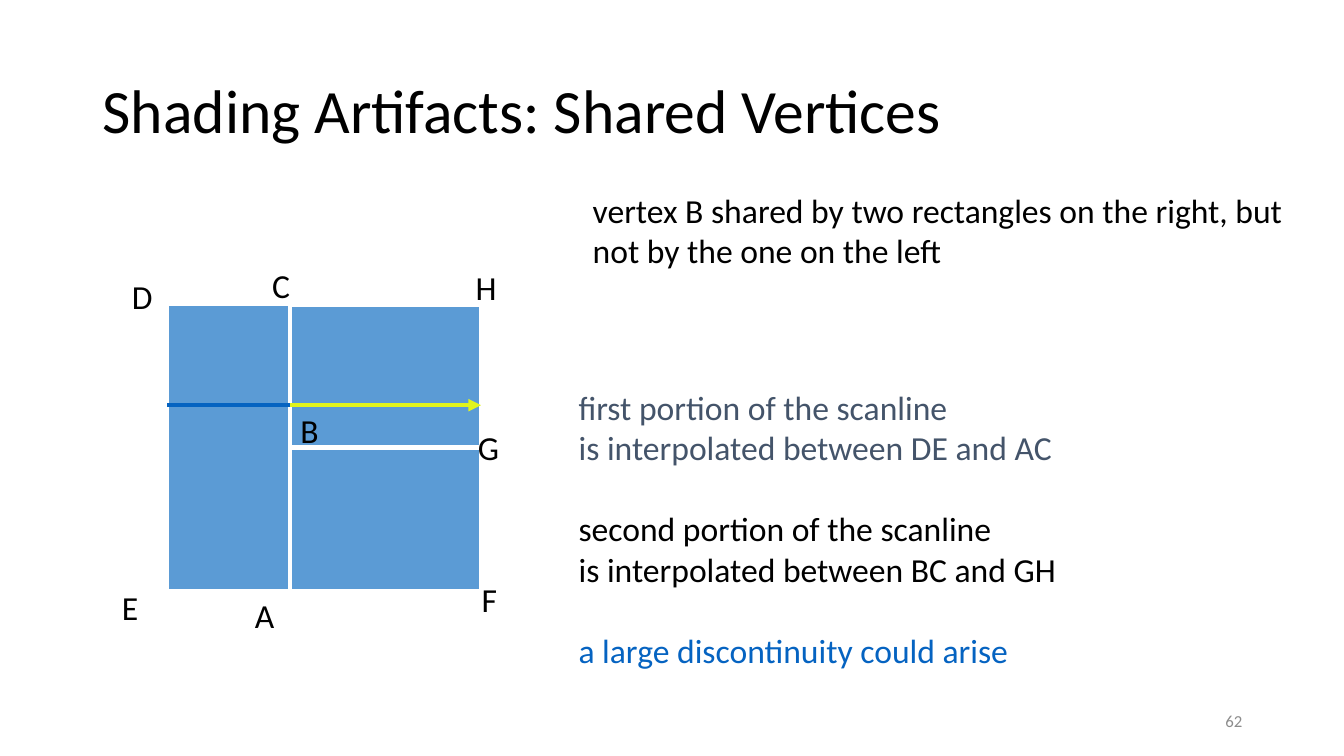
from lxml import etree
from pptx import Presentation
from pptx import util as u
from pptx.dml.color import RGBColor
from pptx.enum import shapes, text
from pptx.oxml.ns import qn

THEME = {
    "font": "Calibri",
    "title": 44, "body": 24, "number": 12, "stroke": 3,
    "black": "000000", "white": "FFFFFF", "grey": "8C8C8C", "face": "5B9BD5",
    "slate": "44546A", "blue": "0563C1", "yellow": "E1F41C",
}

TITLE = "Shading Artifacts: Shared Vertices"
SLIDE_NUMBER = "62"
SHARING = "vertex B shared by two rectangles on the right, but not by the one on the left"
EXPLANATION = [
    ("first portion of the scanline\nis interpolated between DE and AC", "slate"),
    ("second portion of the scanline\nis interpolated between BC and GH", "black"),
    ("a large discontinuity could arise", "blue"),
]
VERTEX_LABELS = [
    ("B", 2.88, 4.02, 0.39), ("A", 2.43, 5.85, 0.4), ("C", 2.6, 2.58, 0.38),
    ("E", 1.11, 5.77, 0.37), ("D", 1.21, 2.69, 0.41), ("F", 4.68, 5.69, 0.36),
    ("H", 4.62, 2.6, 0.41), ("G", 4.64, 4.19, 0.41),
]
LEFT, SHARED_EDGE, RIGHT = 1.66, 2.88, 4.77
TOP, MIDDLE, BOTTOM = 3.02, 4.44, 5.86
SCANLINE = 4.02
RECTANGLES = [
    (SHARED_EDGE, TOP, RIGHT, MIDDLE),
    (SHARED_EDGE, MIDDLE, RIGHT, BOTTOM),
    (LEFT, TOP, SHARED_EDGE, BOTTOM),
]
SCANLINE_PARTS = [(LEFT, SHARED_EDGE, "blue", False), (SHARED_EDGE, RIGHT, "yellow", True)]


def color(name):
    return RGBColor.from_string(THEME[name])


def set_stroke(shape, name):
    shape.line.color.rgb = color(name)
    shape.line.width = u.Pt(THEME["stroke"])


def write(paragraph, words, size, name):
    paragraph.text = words
    for run in paragraph.runs:
        run.font.name = THEME["font"]
        run.font.size = u.Pt(THEME[size])
        run.font.color.rgb = color(name)


def add_text(slide, box, words, size="body", name="black", wrap=True,
             anchor=text.MSO_ANCHOR.TOP):
    shape = slide.shapes.add_textbox(*map(u.Inches, box))
    shape.text_frame.word_wrap = wrap
    shape.text_frame.vertical_anchor = anchor
    paragraph = shape.text_frame.paragraphs[0]
    write(paragraph, words, size, name)
    return paragraph


def add_rectangle(slide, left, top, right, bottom):
    shape = slide.shapes.add_shape(
        shapes.MSO_SHAPE.RECTANGLE,
        *map(u.Inches, (left, top, right - left, bottom - top)))
    shape.shadow.inherit = False
    set_stroke(shape, "white")
    return shape


def add_scanline(slide, start, end, name, arrow):
    connector = slide.shapes.add_connector(
        shapes.MSO_CONNECTOR.STRAIGHT,
        *map(u.Inches, (start, SCANLINE, end, SCANLINE)))
    set_stroke(connector, name)
    if arrow:
        etree.SubElement(connector.line._get_or_add_ln(), qn("a:tailEnd"), type="triangle")
    etree.SubElement(connector._element.spPr, qn("a:effectLst"))


def add_explanation(slide):
    shape = add_rectangle(slide, 5.64, 3.79, 10.64, 6.72)
    shape.fill.background()
    frame = shape.text_frame
    frame.word_wrap = False
    frame.vertical_anchor = text.MSO_ANCHOR.TOP
    for index, (words, name) in enumerate(EXPLANATION):
        paragraph = frame.add_paragraph() if index else frame.paragraphs[0]
        paragraph.alignment = text.PP_ALIGN.LEFT
        paragraph.space_before = u.Pt(29 if index else 0)
        write(paragraph, words, "body", name)


def main():
    presentation = Presentation()
    presentation.slide_width = u.Inches(13.33)
    presentation.slide_height = u.Inches(7.5)
    slide = presentation.slides.add_slide(presentation.slide_layouts[6])

    number = add_text(slide, (9.42, 6.95, 3, 0.4), SLIDE_NUMBER, "number", "grey",
                      anchor=text.MSO_ANCHOR.MIDDLE)
    number.alignment = text.PP_ALIGN.RIGHT
    for edges in RECTANGLES:
        rectangle = add_rectangle(slide, *edges)
        rectangle.fill.solid()
        rectangle.fill.fore_color.rgb = color("face")
    for letter, left, top, width in VERTEX_LABELS:
        add_text(slide, (left, top, width, 0.5), letter, wrap=False)
    add_text(slide, (5.78, 1.83, 7.22, 0.91), SHARING)
    for part in SCANLINE_PARTS:
        add_scanline(slide, *part)
    add_explanation(slide)
    title = add_text(slide, (0.92, 0.4, 11.5, 1.45), TITLE, "title",
                     anchor=text.MSO_ANCHOR.MIDDLE)
    title.line_spacing = 0.9
    presentation.save("out.pptx")


if __name__ == "__main__":
    main()
